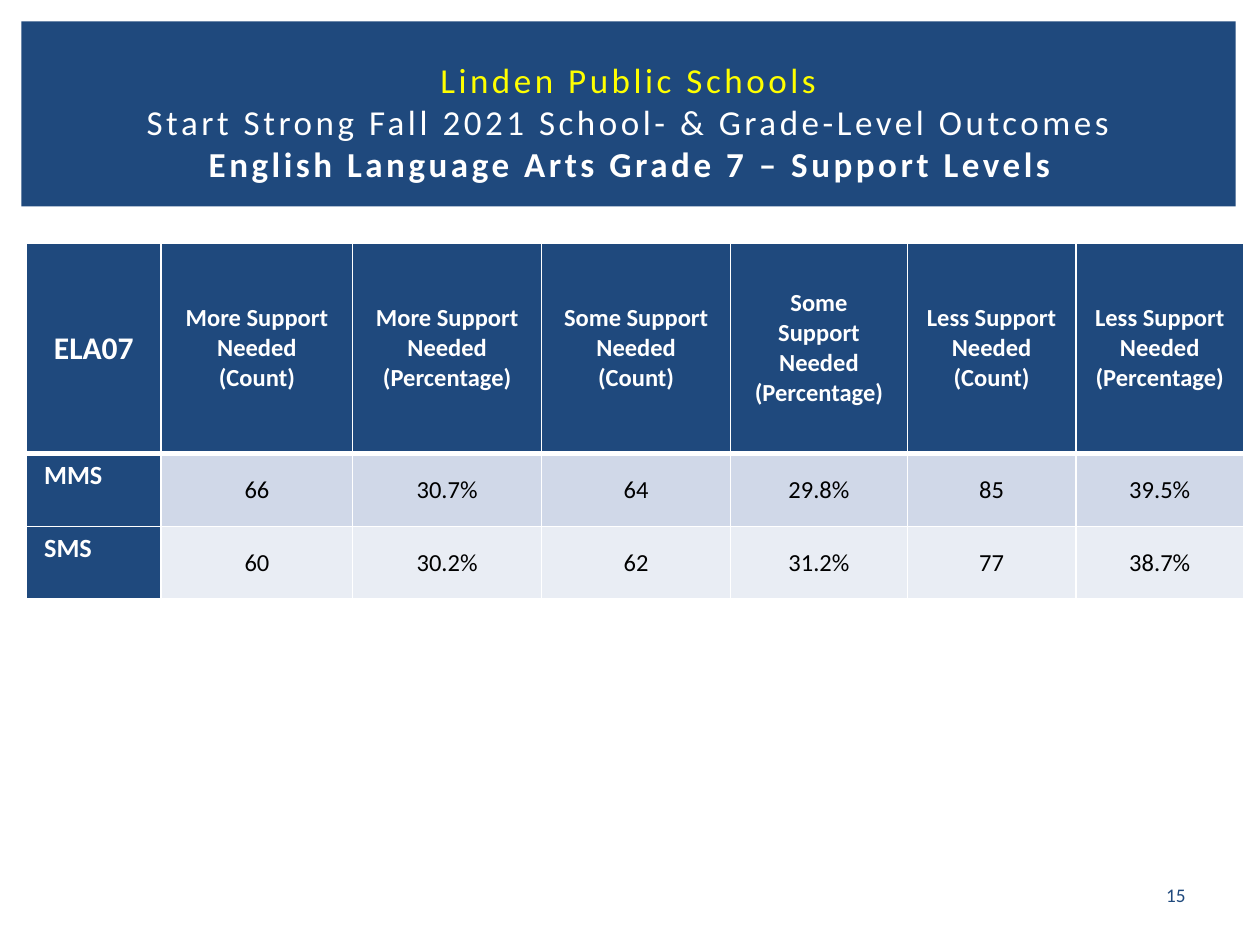
from lxml.etree import SubElement
from pptx import Presentation
from pptx.dml.color import RGBColor
from pptx.enum.shapes import MSO_SHAPE as Shape
from pptx.enum.text import MSO_ANCHOR as Anchor, PP_ALIGN as Align
from pptx.oxml.ns import qn
from pptx.util import Cm, Pt

NAVY, WHITE, YELLOW, BLACK = "1F497D", "FFFFFF", "FFFF00", "000000"
BANDS = ["D0D8E8", "E9EDF4"]

TITLE_LINES = [
    ("Linden Public Schools", YELLOW, False),
    ("Start Strong Fall 2021 School- & Grade-Level Outcomes", WHITE, False),
    ("English Language Arts Grade 7 – Support Levels", WHITE, True),
]
SUPPORT_HEADERS = [
    f"{level} Support Needed\n({measure})"
    for level in ("More", "Some", "Less")
    for measure in ("Count", "Percentage")
]
OUTCOMES = [
    ["MMS", "66", "30.7%", "64", "29.8%", "85", "39.5%"],
    ["SMS", "60", "30.2%", "62", "31.2%", "77", "38.7%"],
]
COLUMN_WIDTHS = [2.72, 3.86, 3.81, 3.81, 3.56, 3.4, 3.38]
ROW_HEIGHTS = [4.24, 1.47, 1.47]


def color(hex_code):
    return RGBColor.from_string(hex_code)


def style_run(run, size, hex_code, bold=False):
    run.font.name = "Calibri"
    run.font.size = Pt(size)
    run.font.bold = bold
    run.font.color.rgb = color(hex_code)


def add_text(slide, left, top, width, height, text):
    """Add a centred, wrapping text box and return its only paragraph."""
    frame = slide.shapes.add_textbox(Cm(left), Cm(top), Cm(width), Cm(height)).text_frame
    frame.word_wrap = True
    frame.vertical_anchor = Anchor.MIDDLE
    frame.text = text
    paragraph = frame.paragraphs[0]
    paragraph.alignment = Align.CENTER
    return paragraph


def add_banner(slide, left, top, width, height):
    banner = slide.shapes.add_shape(
        Shape.RECTANGLE, Cm(left), Cm(top), Cm(width), Cm(height))
    banner.shadow.inherit = False
    banner.fill.solid()
    banner.fill.fore_color.rgb = color(NAVY)
    banner.line.fill.background()

    # Title: three lines in one paragraph, letters spaced by 2 pt
    title = add_text(slide, left + 0.28, top + 0.56, width - 0.5, height - 0.81,
                     "\v".join(line for line, _, _ in TITLE_LINES))
    for run, (_, hex_code, bold) in zip(title.runs, TITLE_LINES):
        style_run(run, 20, hex_code, bold)
        run.font._element.set("spc", "200")


def set_borders(cell, top, bottom):
    """Draw white borders; they must precede the fill in the cell's XML."""
    properties = cell._tc.get_or_add_tcPr()
    widths = {"a:lnL": 1, "a:lnR": 1, "a:lnT": top, "a:lnB": bottom}
    for position, (side, width) in enumerate(widths.items()):
        line = SubElement(properties, qn(side), w=str(Pt(width)))
        fill = SubElement(line, qn("a:solidFill"))
        SubElement(fill, qn("a:srgbClr"), val=WHITE)
        properties.insert(position, line)


def fill_cell(cell, text, fill, size, hex_code, bold, align, anchor):
    cell.fill.solid()
    cell.fill.fore_color.rgb = color(fill)
    cell.margin_left = cell.margin_right = Cm(0.36)
    cell.margin_top = cell.margin_bottom = Cm(0.13)
    cell.vertical_anchor = anchor
    cell.text_frame.text = text
    for paragraph in cell.text_frame.paragraphs:
        paragraph.alignment = align
        for run in paragraph.runs:
            style_run(run, size, hex_code, bold)


def add_outcomes_table(slide, left, top):
    rows = [["ELA07", *SUPPORT_HEADERS], *OUTCOMES]
    table = slide.shapes.add_table(
        len(rows), len(COLUMN_WIDTHS), Cm(left), Cm(top),
        Cm(sum(COLUMN_WIDTHS)), Cm(sum(ROW_HEIGHTS))).table
    for column, width in zip(table.columns, COLUMN_WIDTHS):
        column.width = Cm(width)
    for row, height in zip(table.rows, ROW_HEIGHTS):
        row.height = Cm(height)

    for r, texts in enumerate(rows):
        for c, text in enumerate(texts):
            cell = table.cell(r, c)
            if r == 0:  # Column headers
                fill_cell(cell, text, NAVY, 14 if c else 18, WHITE, True,
                          Align.CENTER, Anchor.MIDDLE)
            elif c == 0:  # School names
                fill_cell(cell, text, NAVY, 15, WHITE, True, Align.LEFT, Anchor.TOP)
            else:  # Results
                fill_cell(cell, text, BANDS[r - 1], 14, BLACK, False,
                          Align.CENTER, Anchor.MIDDLE)
            set_borders(cell, top=3 if r == 1 else 1, bottom=3 if r == 0 else 1)


def add_page_number(slide, left, top, width, height):
    number = add_text(slide, left, top, width, height, "15")
    style_run(number.runs[0], 11, NAVY)


def main():
    deck = Presentation()
    deck.slide_width, deck.slide_height = Cm(25.4), Cm(19.05)
    slide = deck.slides.add_slide(deck.slide_layouts[6])
    add_banner(slide, 0.43, 0.43, 24.48, 3.73)
    add_outcomes_table(slide, 0.53, 4.9)
    add_page_number(slide, 22.89, 17.65, 1.63, 0.76)
    deck.save("out.pptx")


if __name__ == "__main__":
    main()
